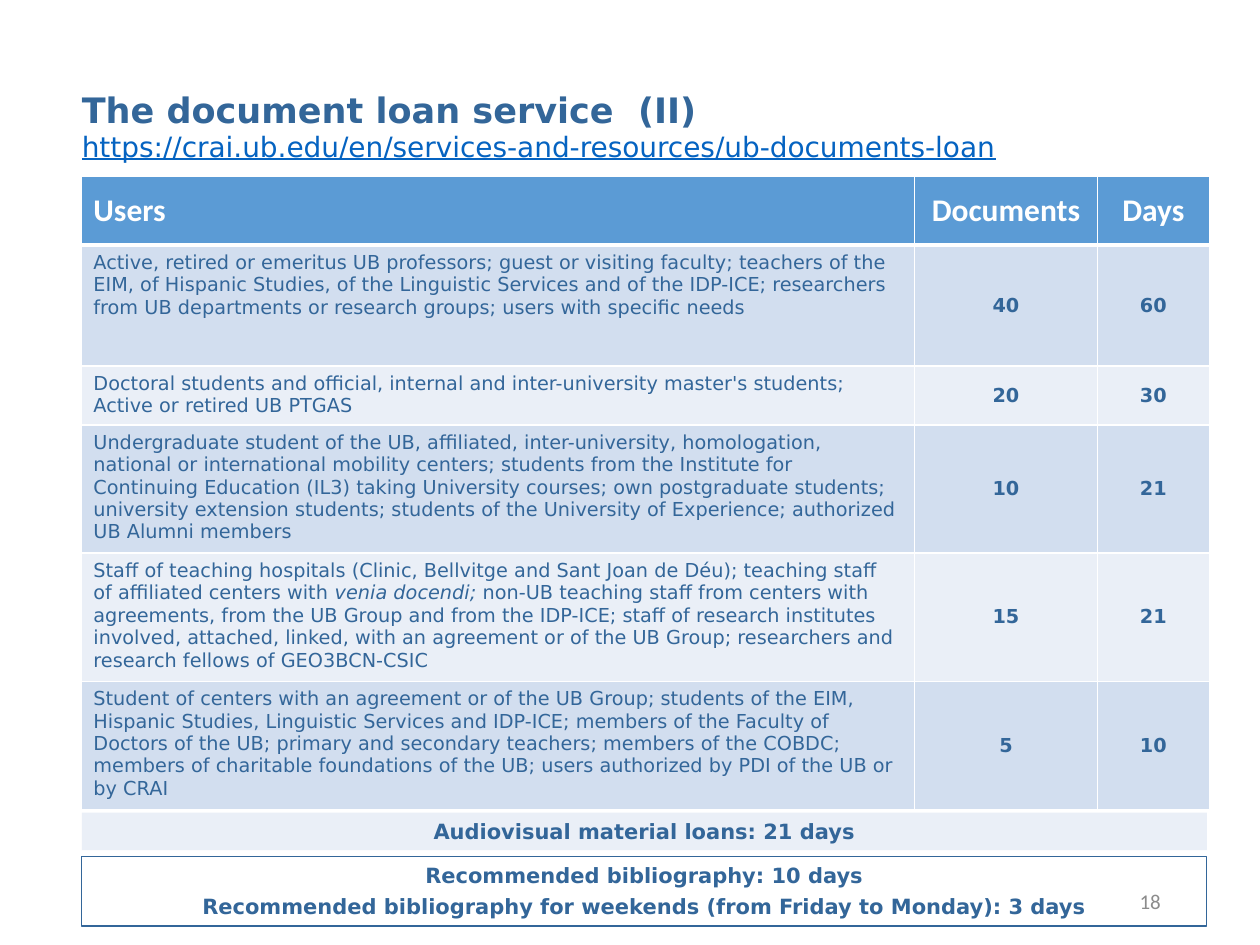
from lxml import etree
from pptx import Presentation
from pptx import util as u
from pptx.dml.color import RGBColor
from pptx.enum import shapes, text
from pptx.oxml.ns import qn

COLORS = {
    "blue": "336699",
    "link": "0563C1",
    "grey": "8C8C8C",
    "header": "5B9BD5",
    "band_dark": "D2DEEF",
    "band_light": "EAEFF7",
    "white": "FFFFFF",
}
BODY_FONT = "DejaVu Sans"
LEFT, CENTER, RIGHT = text.PP_ALIGN.LEFT, text.PP_ALIGN.CENTER, text.PP_ALIGN.RIGHT
TOP, MIDDLE = text.MSO_ANCHOR.TOP, text.MSO_ANCHOR.MIDDLE

COLUMN_WIDTHS = [16.81, 3.68, 2.26]
ROW_HEIGHTS = [1.38, 2.44, 1.18, 2.58, 2.58, 2.58]
HEADINGS = ["Users", "Documents", "Days"]
LOANS = [
    (["Active, retired or emeritus UB professors; guest or visiting faculty; "
      "teachers of the EIM, of Hispanic Studies, of the Linguistic Services and of "
      "the IDP-ICE; researchers from UB departments or research groups; users with "
      "specific needs"], "40", "60"),
    (["Doctoral students and official, internal and inter-university master's "
      "students; Active or retired UB PTGAS"], "20", "30"),
    (["Undergraduate student of the UB, affiliated, inter-university, homologation, "
      "national or international mobility centers; students from the Institute for "
      "Continuing Education (IL3) taking University courses; own postgraduate "
      "students; university extension students; students of the University of "
      "Experience; authorized UB Alumni members"], "10", "21"),
    (["Staff of teaching hospitals (Clinic, Bellvitge and Sant Joan de Déu); "
      "teaching staff of affiliated centers with ",
      ("venia docendi; ", {"italic": True}),
      "non-UB teaching staff from centers with agreements, from the UB Group and "
      "from the IDP-ICE; staff of research institutes involved, attached, linked, "
      "with an agreement or of the UB Group; researchers and research fellows of "
      "GEO3BCN-CSIC"], "15", "21"),
    (["Student of centers with an agreement or of the UB Group; students of the "
      "EIM, Hispanic Studies, Linguistic Services and IDP-ICE; members of the "
      "Faculty of Doctors of the UB; primary and secondary teachers; members of the "
      "COBDC; members of charitable foundations of the UB; users authorized by PDI "
      "of the UB or by CRAI"], "5", "10"),
]


def rgb(name):
    return RGBColor.from_string(COLORS[name])


def write(tf, paragraphs, size=12, font=BODY_FONT, color="blue", bold=False,
          underline=False, align=LEFT, line_spacing=None, gap=0):
    tf.word_wrap = True
    for i, runs in enumerate(paragraphs):
        p = tf.paragraphs[0] if i == 0 else tf.add_paragraph()
        p.alignment = align
        if line_spacing:
            p.line_spacing = line_spacing
        if i and gap:
            p.space_before = u.Pt(gap)
        for run in [runs] if isinstance(runs, str) else runs:
            content, extra = (run, {}) if isinstance(run, str) else run
            r = p.add_run()
            r.text = content
            r.font.size = u.Pt(size)
            r.font.name = font
            r.font.color.rgb = rgb(color)
            r.font.bold = bold
            r.font.italic = extra.get("italic", False)
            if underline:
                r.font.underline = True


def add_text(s, box, paragraphs, anchor=TOP, **style):
    sp = s.shapes.add_textbox(*map(u.Cm, box))
    sp.text_frame.vertical_anchor = anchor
    write(sp.text_frame, paragraphs, **style)


def add_box(s, box, paragraphs, fill=None, line=None, **style):
    sp = s.shapes.add_shape(shapes.MSO_SHAPE.RECTANGLE, *map(u.Cm, box))
    sp.shadow.inherit = False
    if fill:
        sp.fill.solid()
        sp.fill.fore_color.rgb = rgb(fill)
    else:
        sp.fill.background()
    if line:
        sp.line.color.rgb = rgb(line)
        sp.line.width = u.Pt(0.75)
    else:
        sp.line.fill.background()
    sp.text_frame.vertical_anchor = TOP
    write(sp.text_frame, paragraphs, **style)


def set_borders(cell, **widths):
    tc_pr = cell._tc.get_or_add_tcPr()
    for side in ("L", "R", "T", "B"):
        ln = etree.SubElement(tc_pr, qn(f"a:ln{side}"), w=str(u.Pt(widths.get(side, 1))))
        fill = etree.SubElement(ln, qn("a:solidFill"))
        etree.SubElement(fill, qn("a:srgbClr"), val=COLORS["white"])


def fill_cell(cell, runs, fill, anchor=MIDDLE, borders=None, **style):
    set_borders(cell, **(borders or {}))
    cell.fill.solid()
    cell.fill.fore_color.rgb = rgb(fill)
    cell.vertical_anchor = anchor
    write(cell.text_frame, [runs], **style)


def add_loan_table(s, left, top):
    table = s.shapes.add_table(
        len(ROW_HEIGHTS), len(COLUMN_WIDTHS), u.Cm(left), u.Cm(top),
        u.Cm(sum(COLUMN_WIDTHS)), u.Cm(sum(ROW_HEIGHTS))).table
    for column, width in zip(table.columns, COLUMN_WIDTHS):
        column.width = u.Cm(width)
    for row, height in zip(table.rows, ROW_HEIGHTS):
        row.height = u.Cm(height)
    for c, heading in enumerate(HEADINGS):
        fill_cell(table.cell(0, c), heading, "header", borders={"B": 3}, size=18,
                  font="Calibri", color="white", bold=True,
                  align=CENTER if c else LEFT)
    for r, (users, *limits) in enumerate(LOANS, 1):
        band = "band_dark" if r % 2 else "band_light"
        borders = {"T": 3} if r == 1 else {}
        fill_cell(table.cell(r, 0), users, band, anchor=TOP, borders=borders, size=11)
        for c, limit in enumerate(limits, 1):
            fill_cell(table.cell(r, c), limit, band, borders=borders, size=11,
                      bold=True, align=CENTER)


def main():
    prs = Presentation()
    prs.slide_width, prs.slide_height = u.Cm(25.4), u.Cm(19.05)
    s = prs.slides.add_slide(prs.slide_layouts[6])
    add_text(s, (17.93, 17.65, 5.72, 1.02), ["18"], anchor=MIDDLE, font="Calibri",
             color="grey", align=RIGHT)
    add_text(s, (1.4, 1.75, 17.93, 1.02), ["The document loan service  (II)"],
             anchor=MIDDLE, size=20, bold=True, line_spacing=0.9)
    add_text(s, (1.4, 2.49, 19.66, 1.63),
             ["https://crai.ub.edu/en/services-and-resources/ub-documents-loan"],
             size=16, color="link", underline=True)
    add_loan_table(s, 1.63, 3.56)
    add_box(s, (1.65, 16.38, 22.68, 0.76), ["Audiovisual material loans: 21 days"],
            fill="band_light", bold=True, align=CENTER)
    add_box(s, (1.65, 17.27, 22.68, 1.4),
            ["Recommended bibliography: 10 days",
             "Recommended bibliography for weekends (from Friday to Monday): 3 days"],
            line="blue", bold=True, align=CENTER, gap=3)
    prs.save("out.pptx")


if __name__ == "__main__":
    main()
